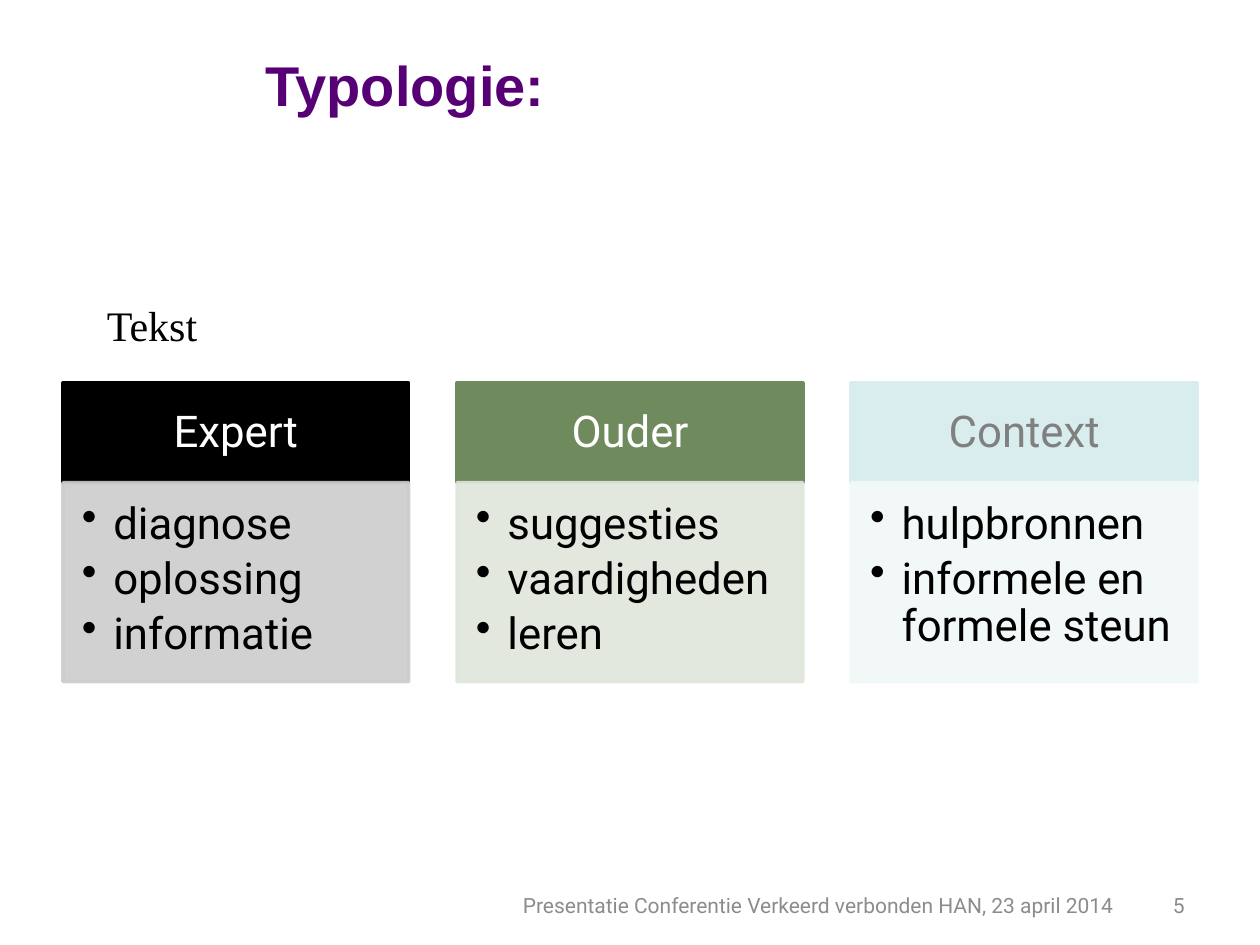
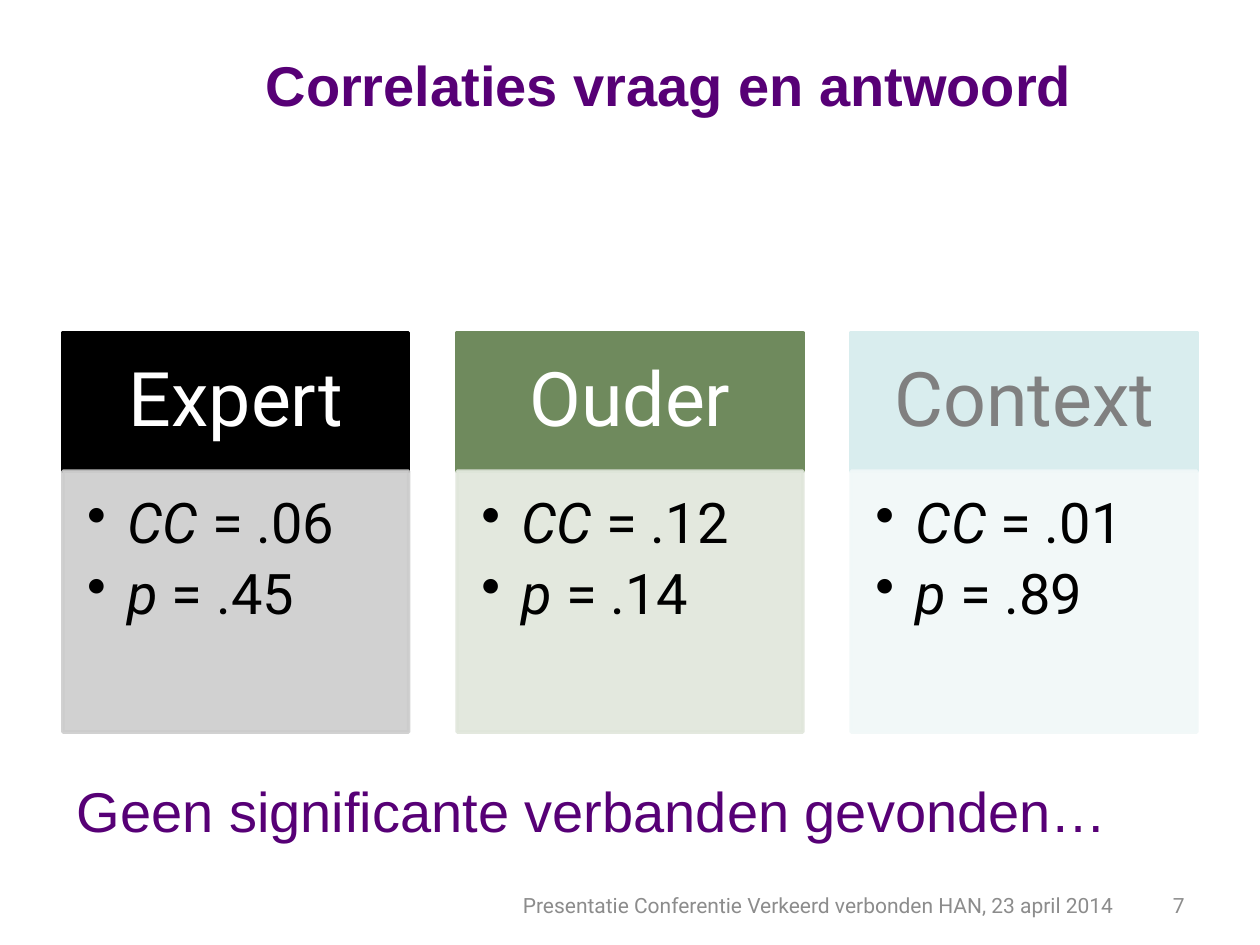
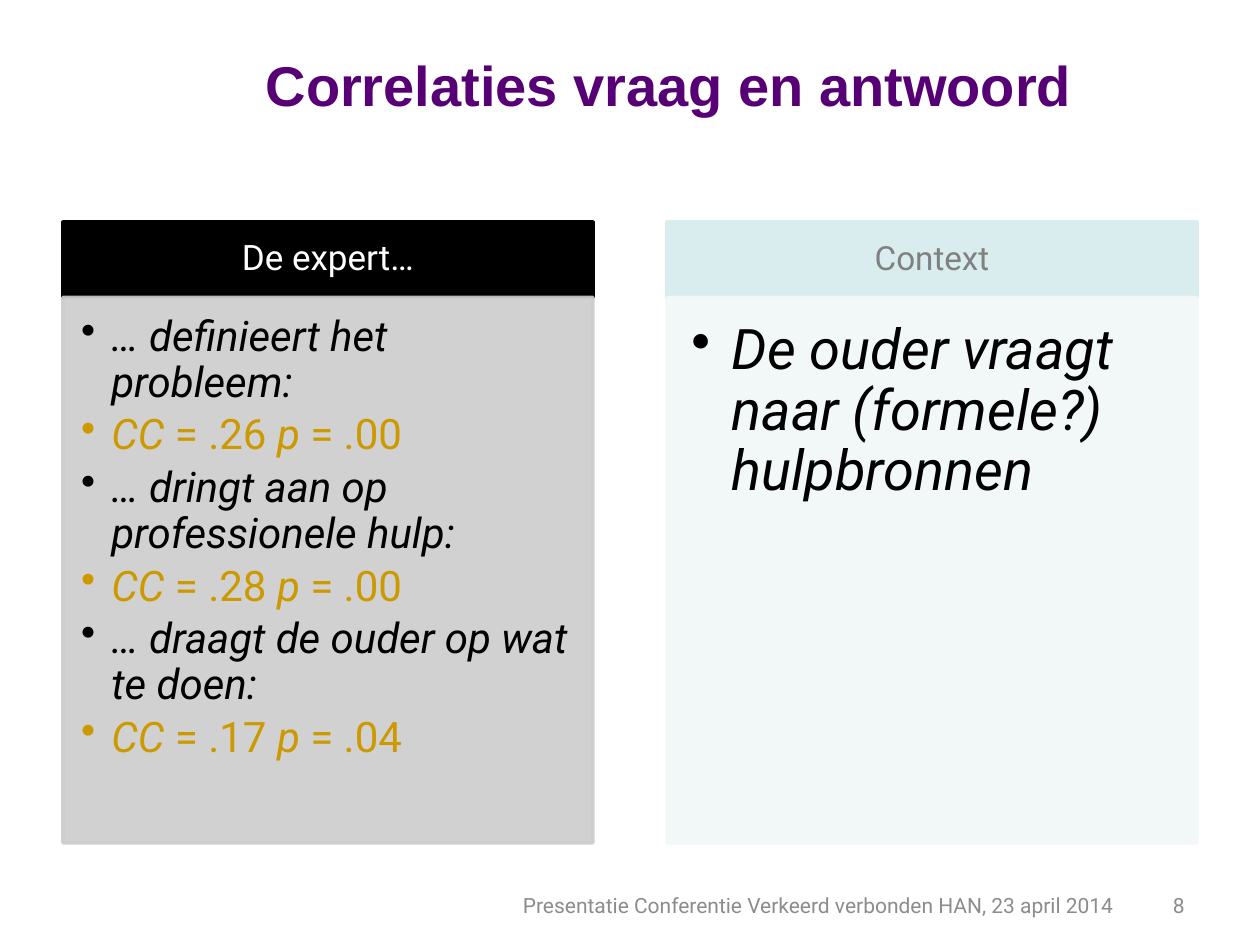
from dataclasses import dataclass

from lxml.etree import SubElement
from pptx import Presentation
from pptx.dml.color import RGBColor
from pptx.enum.shapes import MSO_SHAPE
from pptx.enum.text import MSO_ANCHOR, PP_ALIGN
from pptx.oxml.ns import qn
from pptx.util import Inches, Pt


@dataclass(frozen=True)
class Theme:
    """Hold the colours, fonts, type sizes and grid of the deck."""
    purple: str = "570076"
    grey: str = "8C8C8C"
    black: str = "000000"
    gold: str = "CC9900"
    sans: str = "Arial"
    main: str = "Roboto"
    serif: str = "Times New Roman"
    large: int = 32
    plain: int = 24
    small: int = 12
    left: float = 0.5
    span: float = 9
    gap: float = 0.14
    alpha: int = 90


@dataclass(frozen=True)
class Tone:
    """Hold the head, text and body colours of a card."""
    head: str
    text: str
    body: str


@dataclass(frozen=True)
class Run:
    """Hold a piece of text with its slant and colour."""
    text: str
    slant: bool = False
    hue: str = "000000"


@dataclass(frozen=True)
class Card:
    """Hold the content and type sizes of a card."""
    title: str
    tone: Tone
    items: list
    top_size: int
    size: int


THEME = Theme()
EXPERT = Tone("000000", "FFFFFF", "CCCCCC")
PARENT = Tone("6F8A5D", "FFFFFF", "E0E6DB")
CONTEXT = Tone("D9EDEE", "808080", "F1F8F8")
FOOTER = "Presentatie Conferentie Verkeerd verbonden HAN, 23 april 2014"


def add_run(para, run, size, font, bold=False):
    """Add one styled run to a paragraph."""
    part = para.add_run()
    part.text = run.text
    part.font.size = Pt(size)
    part.font.name = font
    part.font.bold = bold
    part.font.italic = run.slant
    part.font.color.rgb = RGBColor.from_string(run.hue)


def add_text(slide, box, text, size, font, hue, bold=False,
             align=PP_ALIGN.LEFT, anchor=MSO_ANCHOR.MIDDLE):
    """Add a text box with a single line of text."""
    frame = slide.shapes.add_textbox(*map(Inches, box)).text_frame
    frame.word_wrap = True
    frame.vertical_anchor = anchor
    para = frame.paragraphs[0]
    para.alignment = align
    add_run(para, Run(text, hue=hue), size, font, bold)


def add_block(slide, box, hue, pads, anchor, alpha=100):
    """Add a filled rectangle and return its text frame."""
    block = slide.shapes.add_shape(MSO_SHAPE.RECTANGLE, *map(Inches, box))
    block.shadow.inherit = False
    block.line.width = Pt(2)
    for fill in (block.fill, block.line.fill):
        fill.solid()
        fill.fore_color.rgb = RGBColor.from_string(hue)
    if alpha < 100:
        for color in block._element.spPr.iter(qn("a:srgbClr")):
            SubElement(color, qn("a:alpha"), val=str(alpha * 1000))
    frame = block.text_frame
    frame.word_wrap = True
    frame.vertical_anchor = anchor
    (frame.margin_left, frame.margin_top,
     frame.margin_right, frame.margin_bottom) = map(Inches, pads)
    return frame


def add_point(para, runs, size):
    """Fill a paragraph as a bullet with a hanging indent."""
    para.level = 1
    para.alignment = PP_ALIGN.LEFT
    props = para._p.get_or_add_pPr()
    indent = Inches(size / 100)
    props.set("marL", str(indent))
    props.set("indent", str(-indent))
    SubElement(props, qn("a:buChar"), char="•")
    para.line_spacing = 0.9
    para.space_after = Pt(round(size * 0.18, 1))
    for run in runs:
        add_run(para, run, size, THEME.main)


def add_card(slide, card, left, top, width, head, body):
    """Add a card with a heading and a body of bullets."""
    side, edge = card.top_size / 130, card.top_size / 228
    frame = add_block(slide, (left, top, width, head), card.tone.head,
                      (side, edge, side, edge), MSO_ANCHOR.MIDDLE)
    para = frame.paragraphs[0]
    para.alignment = PP_ALIGN.CENTER
    para.line_spacing = 0.9
    add_run(para, Run(card.title, hue=card.tone.text), card.top_size, THEME.main)

    pads = [card.size * rate for rate in (0.006, 0.006, 0.008, 0.009)]
    frame = add_block(slide, (left, top + head, width, body), card.tone.body,
                      pads, MSO_ANCHOR.TOP, THEME.alpha)
    for place, runs in enumerate(card.items):
        para = frame.add_paragraph() if place else frame.paragraphs[0]
        add_point(para, runs, card.size)


def add_cards(slide, cards, top, head, body):
    """Spread cards evenly over the grid."""
    count = len(cards)
    width = THEME.span / (count + THEME.gap * (count - 1))
    for place, card in enumerate(cards):
        left = THEME.left + place * width * (1 + THEME.gap)
        add_card(slide, card, left, top, width, head, body)


def add_slide(deck, title, number):
    """Add a slide with its title, footer and number."""
    slide = deck.slides.add_slide(deck.slide_layouts[6])
    for left, width, text in ((2.01, 6.93, FOOTER), (8.94, 0.56, str(number))):
        add_text(slide, (left, 6.98, width, 0.4), text, THEME.small,
                 THEME.main, THEME.grey, align=PP_ALIGN.RIGHT)
    add_text(slide, (2.01, 0.29, 7.5, 0.75), title, THEME.large,
             THEME.sans, THEME.purple, bold=True)
    return slide


def score(name, value, hue=THEME.black):
    """Return the runs of a slanted symbol and its value."""
    return [Run(name, True, hue), Run(f" = {value}", hue=hue)]


def finding(claim, link, chance):
    """Return a claim and its golden scores as two bullets."""
    scores = score("CC", f"{link} ", THEME.gold) + score("p", chance, THEME.gold)
    return [[Run(claim, True)], scores]


def add_types(deck):
    """Add the slide with the three types."""
    slide = add_slide(deck, "Typologie:", 5)
    add_text(slide, (0.75, 2.33, 8.5, 0.91), "Tekst", THEME.plain,
             THEME.serif, THEME.black, anchor=MSO_ANCHOR.TOP)
    types = (
        ("Expert", EXPERT, ("diagnose", "oplossing", "informatie")),
        ("Ouder", PARENT, ("suggesties", "vaardigheden", "leren")),
        ("Context", CONTEXT, ("hulpbronnen", "informele en formele steun")),
    )
    cards = [Card(name, tone, [[Run(word)] for word in words], 25, 25)
             for name, tone, words in types]
    add_cards(slide, cards, 3.04, 0.79, 1.58)


def add_links(deck):
    """Add the slide with the score of each type."""
    slide = add_slide(deck, "Correlaties vraag en antwoord", 7)
    add_text(slide, (0.51, 6.11, 8.92, 0.79),
             "Geen significante verbanden gevonden…", THEME.large,
             THEME.sans, THEME.purple, anchor=MSO_ANCHOR.TOP)
    scores = (
        ("Expert", EXPERT, ".06", ".45"),
        ("Ouder", PARENT, ".12", ".14"),
        ("Context", CONTEXT, ".01", ".89"),
    )
    cards = [Card(name, tone, [score("CC", link), score("p", chance)],
                  43, THEME.large)
             for name, tone, link, chance in scores]
    add_cards(slide, cards, 2.64, 1.1, 2.07)


def add_finds(deck):
    """Add the slide with the findings on expert and context."""
    slide = add_slide(deck, "Correlaties vraag en antwoord", 8)
    claims = (
        finding("… definieert het probleem:", ".26", ".00")
        + finding("… dringt aan op professionele hulp:", ".28", ".00")
        + finding("… draagt de ouder op wat te doen:", ".17", ".04")
    )
    asks = [[Run("De ouder vraagt naar (formele?) hulpbronnen", True)]]
    cards = [Card("De expert…", EXPERT, claims, 20, THEME.plain),
             Card("Context", CONTEXT, asks, 19, THEME.large)]
    add_cards(slide, cards, 1.76, 0.6, 4.33)


def main():
    """Build the deck and save it."""
    deck = Presentation()
    deck.slide_width = Inches(10)
    deck.slide_height = Inches(7.5)
    add_types(deck)
    add_links(deck)
    add_finds(deck)
    deck.save("out.pptx")


if __name__ == "__main__":
    main()
